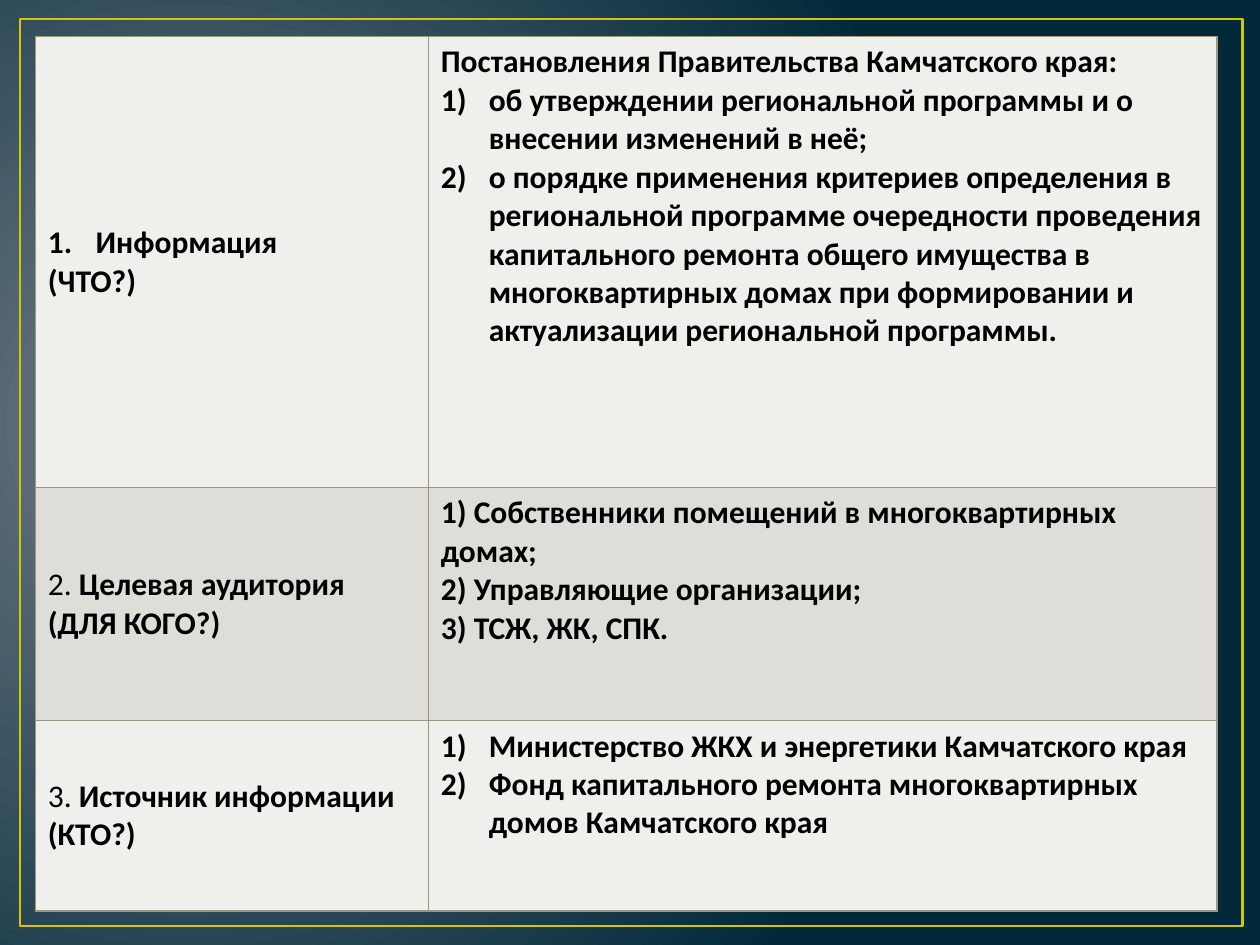
from lxml.etree import SubElement as Sub
from pptx import Presentation
from pptx.dml.color import RGBColor as RGB
from pptx.enum.shapes import MSO_SHAPE as Shape
from pptx.enum.text import MSO_ANCHOR as Anchor
from pptx.oxml.ns import qn
from pptx.util import Inches, Pt

W, H = Inches(10), Inches(7.5)
HUE = {"glow": "717C84", "deep": "01293A", "frame": "CFC60D", "grid": "99987F",
       "light": "EFEFEC", "dark": "DEDDD8", "text": "000000"}
DOT, PAREN = "arabicPeriod", "arabicParenR"
COLS = (3.12, 6.26)
ROWS = (3.58, 1.85, 1.51)

# Each paragraph: (text, format)
BODY = [
    ([("Информация", {"num": DOT}), ("(ЧТО?)", {})],
     [("Постановления Правительства Камчатского края:", {}),
      ("об утверждении региональной программы и о внесении изменений в неё;",
       {"num": PAREN}),
      ("о порядке применения критериев определения в региональной программе "
       "очередности проведения капитального ремонта общего имущества в "
       "многоквартирных домах при формировании и актуализации региональной "
       "программы.", {"num": PAREN})]),
    ([("Целевая аудитория", {"lead": "2. "}), ("(ДЛЯ КОГО?)", {})],
     [("1) Собственники помещений в многоквартирных домах;", {}),
      ("2) Управляющие организации;", {}),
      ("3) ТСЖ, ЖК, СПК.", {})]),
    ([("Источник информации (КТО?)", {"lead": "3. "})],
     [("Министерство ЖКХ и энергетики Камчатского края", {"num": PAREN}),
      ("Фонд капитального ремонта многоквартирных домов Камчатского края",
       {"num": PAREN})]),
]


def color(name):
    return RGB.from_string(HUE[name])


def write(para, text, lead="", num=None, size=18, hue="text", face="Calibri"):
    """Fill a paragraph with bold text, a plain lead and automatic numbering."""
    if num:
        props = para._p.get_or_add_pPr()
        props.set("marL", str(Inches(0.38)))
        props.set("indent", str(-Inches(0.38)))
        Sub(props, qn("a:buFont"), typeface="+mj-lt")
        Sub(props, qn("a:buAutoNum"), type=num)
    for part, bold in ((lead, False), (text, True)):
        if part:
            run = para.add_run()
            run.text = part
            run.font.size, run.font.name, run.font.bold = Pt(size), face, bold
            run.font.color.rgb = color(hue)


def edge(cell):
    props = cell._tc.get_or_add_tcPr()
    for side in ("lnL", "lnR", "lnT", "lnB"):
        line = Sub(props, qn("a:" + side), w=str(Pt(1)))
        Sub(Sub(line, qn("a:solidFill")), qn("a:srgbClr"), val=HUE["grid"])


def backdrop(slide):
    fill = slide.background.fill
    fill.gradient()
    for stop, name, spot in zip(fill.gradient_stops, ("glow", "deep"), (0, 1)):
        stop.color.rgb = color(name)
        stop.position = spot
    grad = slide.element.find(".//" + qn("a:gradFill"))
    grad.remove(grad.find(qn("a:lin")))
    ring = Sub(grad, qn("a:path"), path="circle")
    Sub(ring, qn("a:fillToRect"), l="15000", t="50000", r="85000", b="60000")


def frame(slide, x, y, w, h):
    box = slide.shapes.add_shape(Shape.RECTANGLE, x, y, w, h)
    box.shadow.inherit = False
    box.fill.background()
    box.line.color.rgb = color("frame")
    box.line.width = Pt(1.5)


def grid(slide, x, y, w, h):
    table = slide.shapes.add_table(len(ROWS), len(COLS), x, y, w, h).table
    for col, share in zip(table.columns, COLS):
        col.width = int(w * share / sum(COLS))
    for r, (row, share) in enumerate(zip(table.rows, ROWS)):
        row.height = int(h * share / sum(ROWS))
        for c, paras in enumerate(BODY[r]):
            cell = table.cell(r, c)
            edge(cell)
            cell.fill.solid()
            cell.fill.fore_color.rgb = color("dark" if r % 2 else "light")
            cell.vertical_anchor = Anchor.TOP if c else Anchor.MIDDLE
            body = cell.text_frame
            for i, (text, form) in enumerate(paras):
                para = body.add_paragraph() if i else body.paragraphs[0]
                write(para, text, **form)


def main():
    deck = Presentation()
    deck.slide_width, deck.slide_height = W, H
    slide = deck.slides.add_slide(deck.slide_layouts[6])
    backdrop(slide)
    # Thin frame around the slide
    frame(slide, Inches(0.16), Inches(0.15), Inches(9.7), Inches(7.2))
    # Table of what, for whom and by whom
    grid(slide, Inches(0.28), Inches(0.29), Inches(sum(COLS)), Inches(sum(ROWS)))
    deck.save("out.pptx")


if __name__ == "__main__":
    main()
